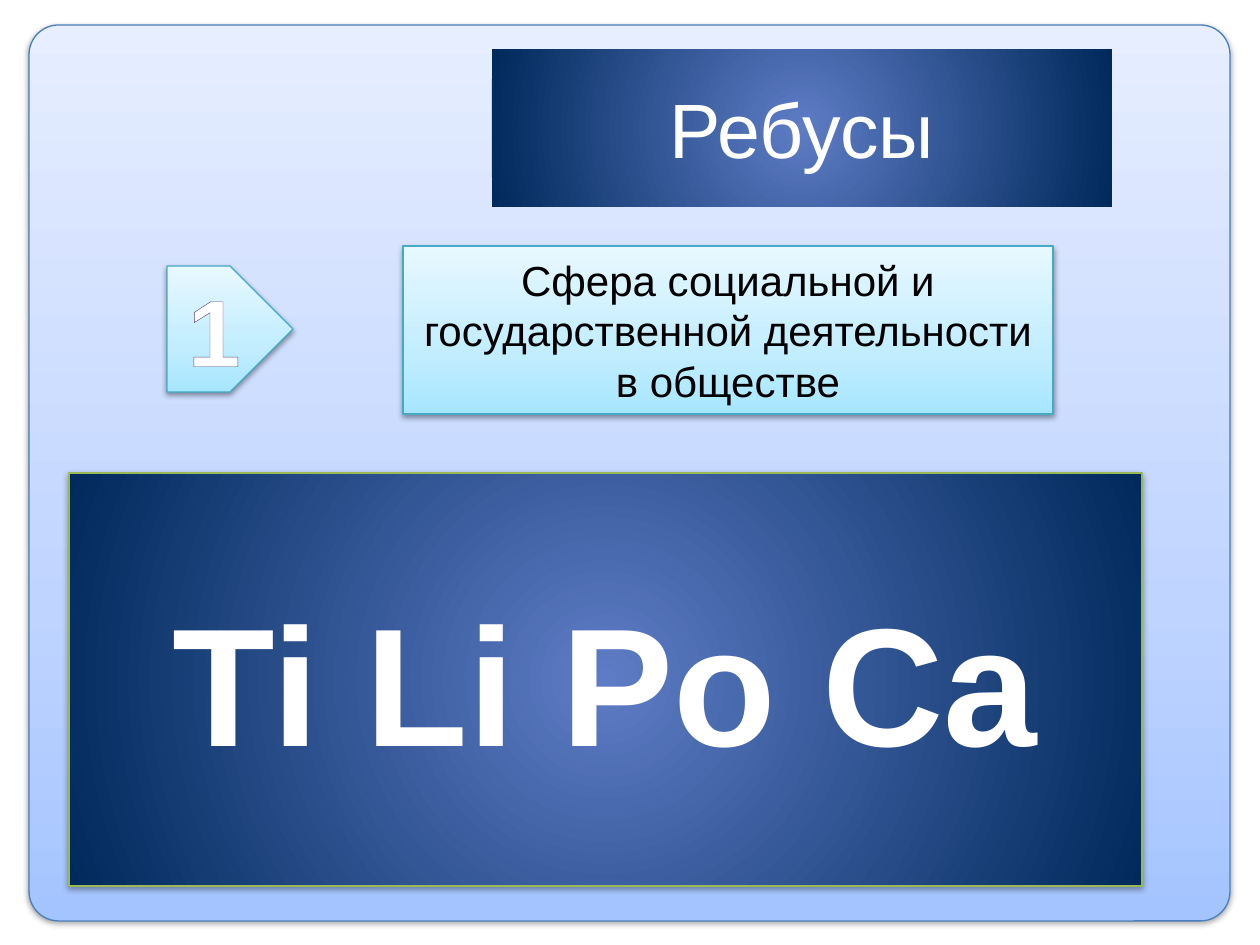
from lxml.etree import SubElement
from pptx import Presentation
from pptx.dml.color import RGBColor
from pptx.enum.shapes import MSO_SHAPE
from pptx.enum.text import MSO_ANCHOR, PP_ALIGN
from pptx.oxml import parse_xml
from pptx.oxml.ns import nsdecls, qn
from pptx.util import Emu, Pt

SCALE = 914400 / 126

# Gradient stops as percent and colour
SKY = [(0, "A4C4FF"), (35, "BFD4FF"), (100, "E6EEFF")]
AQUA = [(0, "A7E6FF"), (35, "C1EDFF"), (100, "E7F8FF")]
NAVY = [(0, "5E7CC5"), (100, "00295C")]


def px(n):
    return Emu(round(n * SCALE))


def color(text):
    return RGBColor.from_string(text)


class Deck:
    font = "Arial"
    ink = "FFFFFF"
    width = 0.75

    def __init__(self, wide, high):
        self.file = Presentation()
        self.file.slide_width, self.file.slide_height = px(wide), px(high)
        self.slide = self.file.slides.add_slide(self.file.slide_layouts[6])

    def fade(self, shape, stops, radial):
        shape.fill.gradient()
        grad = shape._element.spPr.find(qn("a:gradFill"))
        grad.clear()
        grad.set("rotWithShape", "1")
        items = SubElement(grad, qn("a:gsLst"))
        for spot, tint in stops:
            stop = SubElement(items, qn("a:gs"), pos=str(spot * 1000))
            SubElement(stop, qn("a:srgbClr"), val=tint)
        if radial:
            path = SubElement(grad, qn("a:path"), path="circle")
            sides = {side: "50000" for side in "ltrb"}
            SubElement(path, qn("a:fillToRect"), **sides)
        else:
            SubElement(grad, qn("a:lin"), ang="16200000", scaled="1")

    def shade(self, shape):
        effect = shape._element.spPr.find(qn("a:effectLst"))
        effect.append(parse_xml(
            f'<a:outerShdw {nsdecls("a")} blurRad="40000" dist="20000" '
            'dir="5400000" rotWithShape="0"><a:srgbClr val="000000">'
            '<a:alpha val="38000"/></a:srgbClr></a:outerShdw>'))

    def box(self, kind, area, stops, edge=None, radial=False):
        shape = self.slide.shapes.add_shape(kind, *map(px, area))
        self.fade(shape, stops, radial)
        shape.shadow.inherit = False
        if edge:
            shape.line.color.rgb = color(edge)
            shape.line.width = Pt(self.width)
            self.shade(shape)
        else:
            shape.line.fill.background()
        return shape

    def text(self, shape, words, size, ink=None, bold=False, rim=None):
        frame = shape.text_frame
        frame.word_wrap = True
        frame.vertical_anchor = MSO_ANCHOR.MIDDLE
        para = frame.paragraphs[0]
        para.alignment = PP_ALIGN.CENTER
        run = para.add_run()
        run.text = words
        font = run.font
        font.name, font.size, font.bold = self.font, Pt(size), bold
        font.color.rgb = color(ink or self.ink)
        if rim:
            run._r.get_or_add_rPr().insert(0, parse_xml(
                f'<a:ln {nsdecls("a")} w="9000"><a:solidFill>'
                f'<a:srgbClr val="{rim}"/></a:solidFill></a:ln>'))


def main():
    deck = Deck(1260, 945)

    # Rounded backdrop
    back = deck.box(MSO_SHAPE.ROUNDED_RECTANGLE, (29, 25, 1201, 896),
                    SKY, "4B7EBC")
    back.adjustments[0] = 0.033

    # Title
    title = deck.box(MSO_SHAPE.RECTANGLE, (492, 49, 620, 158),
                     NAVY, radial=True)
    deck.text(title, "Ребусы", 44)

    # Number tag
    tag = deck.box(MSO_SHAPE.PENTAGON, (167, 266, 126, 126), AQUA, "46AAC5")
    deck.text(tag, "1", 54, bold=True, rim="5E457C")

    # Hint
    hint = deck.box(MSO_SHAPE.RECTANGLE, (403, 246, 650, 168),
                    AQUA, "46AAC5")
    deck.text(hint, "Сфера социальной и государственной деятельности "
              "в обществе", 24, "000000")

    # Puzzle
    puzzle = deck.box(MSO_SHAPE.RECTANGLE, (69, 473, 1073, 413),
                      NAVY, "98B955", radial=True)
    deck.text(puzzle, "Ti Li Po Ca", 96, bold=True)

    deck.file.save("out.pptx")


if __name__ == "__main__":
    main()
